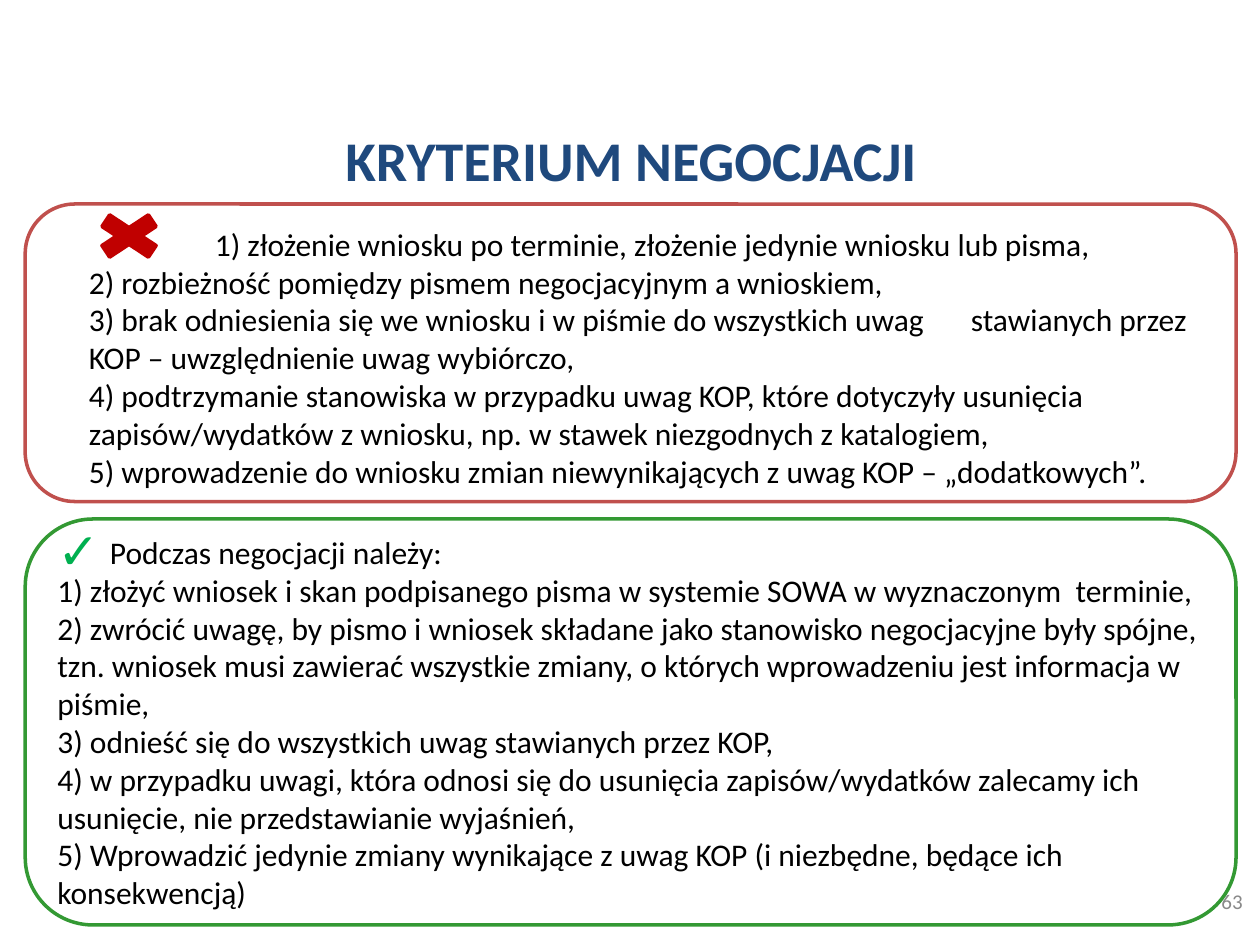
from lxml.etree import SubElement
from pptx import Presentation
from pptx.dml.color import RGBColor
from pptx.enum.shapes import MSO_SHAPE
from pptx.enum.text import MSO_ANCHOR, PP_ALIGN
from pptx.oxml.ns import qn
from pptx.util import Pt

BODY = {"name": "Calibri", "size": Pt(18)}
MISTAKES = [
    "1) złożenie wniosku po terminie, złożenie jedynie wniosku lub pisma,",
    "2) rozbieżność pomiędzy pismem negocjacyjnym a wnioskiem,",
    "3) brak odniesienia się we wniosku i w piśmie do wszystkich uwag \tstawianych przez KOP – uwzględnienie uwag wybiórczo,",
    "4) podtrzymanie stanowiska w przypadku uwag KOP, które dotyczyły usunięcia zapisów/wydatków z wniosku, np. w stawek niezgodnych z katalogiem,",
    "5) wprowadzenie do wniosku zmian niewynikających z uwag KOP – „dodatkowych”.",
]
ADVICE = [
    "Podczas negocjacji należy:",
    "1) złożyć wniosek i skan podpisanego pisma w systemie SOWA w wyznaczonym  terminie,",
    "2) zwrócić uwagę, by pismo i wniosek składane jako stanowisko negocjacyjne były spójne, tzn. wniosek musi zawierać wszystkie zmiany, o których wprowadzeniu jest informacja w piśmie,",
    "3) odnieść się do wszystkich uwag stawianych przez KOP,",
    "4) w przypadku uwagi, która odnosi się do usunięcia zapisów/wydatków zalecamy ich usunięcie, nie przedstawianie wyjaśnień,",
    "5) Wprowadzić jedynie zmiany wynikające z uwag KOP (i niezbędne, będące ich konsekwencją)",
]


def color(value):
    """Turn a hex string into a colour."""
    return RGBColor.from_string(value)


def write(paragraph, text, align, shade, formats):
    """Write one formatted paragraph."""
    paragraph.alignment = align
    span = paragraph.add_run()
    span.text = text
    for name, value in formats.items():
        setattr(span.font, name, value)
    span.font.color.rgb = color(shade)


def indent(paragraph, left, first=0):
    """Set the left margin and first-line indent of a paragraph."""
    properties = paragraph._p.get_or_add_pPr()
    properties.set("marL", str(Pt(left)))
    properties.set("indent", str(Pt(first)))


def add_check(paragraph):
    """Give a paragraph a large green check mark as its bullet."""
    properties = paragraph._p.get_or_add_pPr()
    shade = SubElement(properties, qn("a:buClr"))
    SubElement(shade, qn("a:srgbClr"), val="00B050")
    SubElement(properties, qn("a:buSzPct"), val="160000")
    SubElement(properties, qn("a:buFont"), typeface="Calibri")
    SubElement(properties, qn("a:buChar"), char="✓")


def add_title(page, box, text):
    """Place the slide title in its placeholder."""
    title = page.shapes.title
    title.left, title.top, title.width, title.height = map(Pt, box)
    title.text_frame.vertical_anchor = MSO_ANCHOR.MIDDLE
    formats = {"name": "Calibri", "size": Pt(32), "bold": True}
    write(title.text_frame.paragraphs[0], text, PP_ALIGN.CENTER, "1F497D", formats)


def add_outline(page, kind, box, line, fill=None):
    """Add a shape with a two-point line and an optional fill."""
    shape = page.shapes.add_shape(kind, *map(Pt, box))
    shape.shadow.inherit = False
    shape.line.color.rgb = color(line)
    shape.line.width = Pt(2)
    if fill:
        shape.fill.solid()
        shape.fill.fore_color.rgb = color(fill)
    else:
        shape.fill.background()
    return shape


def add_panel(page, box, line, texts, anchor, left=0, opening=(0, 0)):
    """Add a rounded panel of points and return its text frame."""
    frame = add_outline(page, MSO_SHAPE.ROUNDED_RECTANGLE, box, line).text_frame
    frame.word_wrap = True
    frame.vertical_anchor = anchor
    for index, text in enumerate(texts):
        paragraph = frame.add_paragraph() if index else frame.paragraphs[0]
        indent(paragraph, *((left, 0) if index else opening))
        write(paragraph, text, PP_ALIGN.LEFT, "000000", BODY)
    return frame


def add_cross(page, panel):
    """Place the red cross in the top left corner of a panel."""
    left, top, _, _ = panel
    box = (left + 33.8, top + 1.4, 51.1, 33.8)
    add_outline(page, MSO_SHAPE.MATH_MULTIPLY, box, "C00000", "C00000")


def add_page_number(page, box, number):
    """Place the page number."""
    frame = page.shapes.add_textbox(*map(Pt, box)).text_frame
    frame.word_wrap = True
    frame.vertical_anchor = MSO_ANCHOR.MIDDLE
    formats = {"name": "Calibri", "size": Pt(12)}
    write(frame.paragraphs[0], number, PP_ALIGN.RIGHT, "898989", formats)


def main():
    """Build the slide and save the deck."""
    deck = Presentation()
    deck.slide_width, deck.slide_height = Pt(720), Pt(540)
    page = deck.slides.add_slide(deck.slide_layouts[5])
    add_title(page, (36.7, 73.4, 648, 34.6), "KRYTERIUM NEGOCJACJI")
    mistakes = (14.4, 116.6, 691.9, 170)
    add_panel(page, mistakes, "C0504D", MISTAKES, MSO_ANCHOR.TOP, 21, (21, 72))
    advice = (14.4, 296.6, 691.9, 232)
    frame = add_panel(page, advice, "339933", ADVICE, MSO_ANCHOR.MIDDLE, 0, (30, -30))
    add_check(frame.paragraphs[0])
    add_cross(page, mistakes)
    add_page_number(page, (549.4, 500.4, 167.8, 28.8), "63")
    deck.save("out.pptx")


if __name__ == "__main__":
    main()
